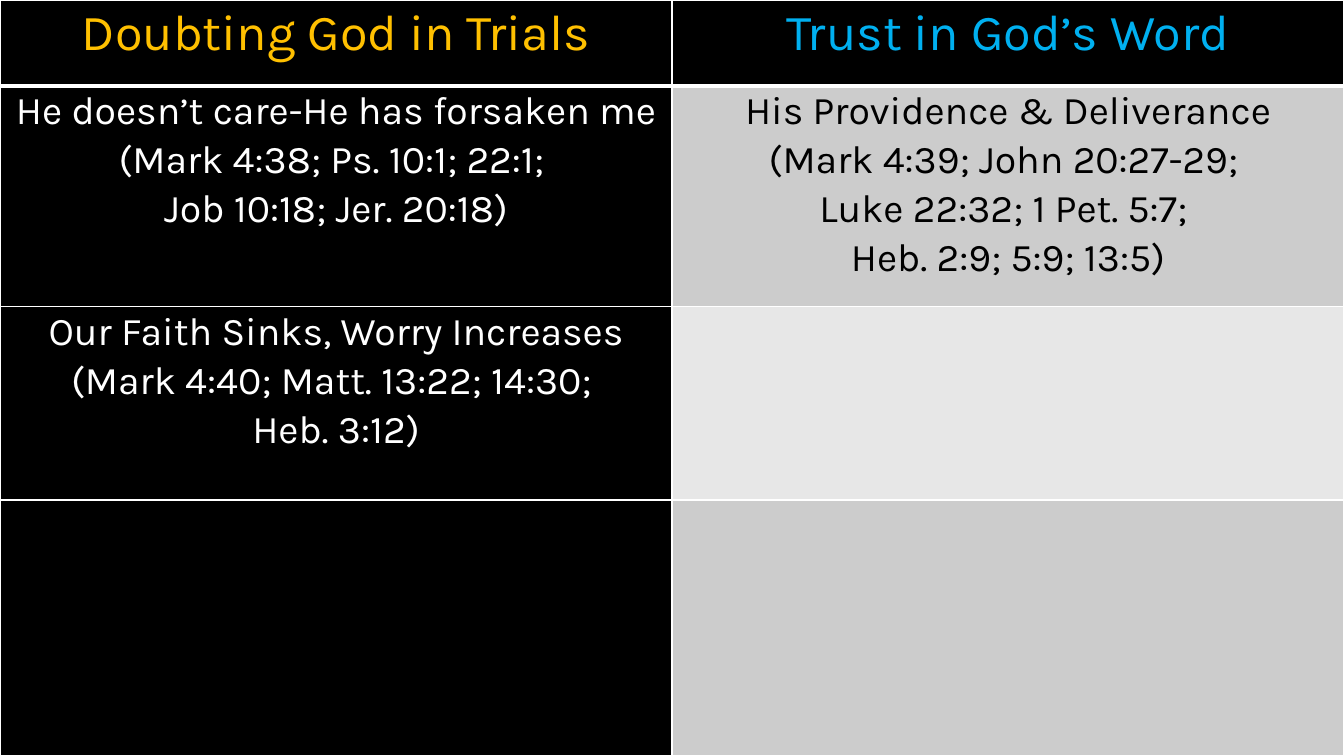
import pptx
import pptx.util
import pptx.dml.color
import pptx.enum.text
import pptx.oxml.ns
import lxml.etree

BLACK, WHITE, GOLD, BLUE = "000000", "FFFFFF", "FFC000", "00B0F0"
GRAY, PALE = "CCCCCC", "E7E7E7"
FONT = "Karla"
WIDTH, HEIGHT = 13.33, 7.5
ROW_HEIGHTS = [0.85, 2.19, 1.92, 2.54]

ROWS = [
    [(BLACK, GOLD, ["Doubting God in Trials"]),
     (BLACK, BLUE, ["Trust in God’s Word"])],
    [(BLACK, WHITE, ["He doesn’t care-He has forsaken me (Mark 4:38; Ps. 10:1; 22:1; ",
                     "Job 10:18; Jer. 20:18)"]),
     (GRAY, BLACK, ["His Providence & Deliverance",
                    "(Mark 4:39; John 20:27-29; ",
                    "Luke 22:32; 1 Pet. 5:7; ",
                    "Heb. 2:9; 5:9; 13:5)"])],
    [(BLACK, WHITE, ["Our Faith Sinks, Worry Increases (Mark 4:40; Matt. 13:22; 14:30; ",
                     "Heb. 3:12)"]),
     (PALE, BLACK, [])],
    [(BLACK, WHITE, []), (GRAY, BLACK, [])],
]


def paint(fill, color):
    fill.solid()
    fill.fore_color.rgb = pptx.dml.color.RGBColor.from_string(color)


def add_borders(cell, row):
    properties = cell._tc.get_or_add_tcPr()
    qn = pptx.oxml.ns.qn
    widths = {"lnL": 1, "lnR": 1, "lnT": 3 if row == 1 else 1, "lnB": 3 if row == 0 else 1}
    for side, points in widths.items():
        line = lxml.etree.SubElement(properties, qn("a:" + side), w=str(pptx.util.Pt(points)))
        fill = lxml.etree.SubElement(line, qn("a:solidFill"))
        lxml.etree.SubElement(fill, qn("a:srgbClr"), val=WHITE)


def write_lines(cell, lines, size, color):
    frame = cell.text_frame
    for index, line in enumerate(lines):
        para = frame.add_paragraph() if index else frame.paragraphs[0]
        para.alignment = pptx.enum.text.PP_ALIGN.CENTER
        para.line_spacing = 1.07
        para.space_before = para.space_after = pptx.util.Pt(0)
        span = para.add_run()
        span.text = line
        span.font.name = FONT
        span.font.size = pptx.util.Pt(size)
        span.font.bold = False
        paint(span.font.fill, color)


def main():
    inches = pptx.util.Inches
    deck = pptx.Presentation()
    deck.slide_width, deck.slide_height = inches(WIDTH), inches(HEIGHT)
    page = deck.slides.add_slide(deck.slide_layouts[6])
    paint(page.background.fill, BLACK)

    columns = len(ROWS[0])
    table = page.shapes.add_table(len(ROWS), columns, 0, 0, inches(WIDTH), inches(HEIGHT)).table
    table.horz_banding = False
    for column in table.columns:
        column.width = inches(WIDTH / columns)

    for row, cells in enumerate(ROWS):
        table.rows[row].height = inches(ROW_HEIGHTS[row])
        for column, (background, color, lines) in enumerate(cells):
            cell = table.cell(row, column)
            cell.margin_left = cell.margin_right = inches(0.07)
            cell.margin_top = cell.margin_bottom = 0
            add_borders(cell, row)
            paint(cell.fill, background)
            write_lines(cell, lines, 28 if row else 36, color)

    deck.save("out.pptx")


if __name__ == "__main__":
    main()
